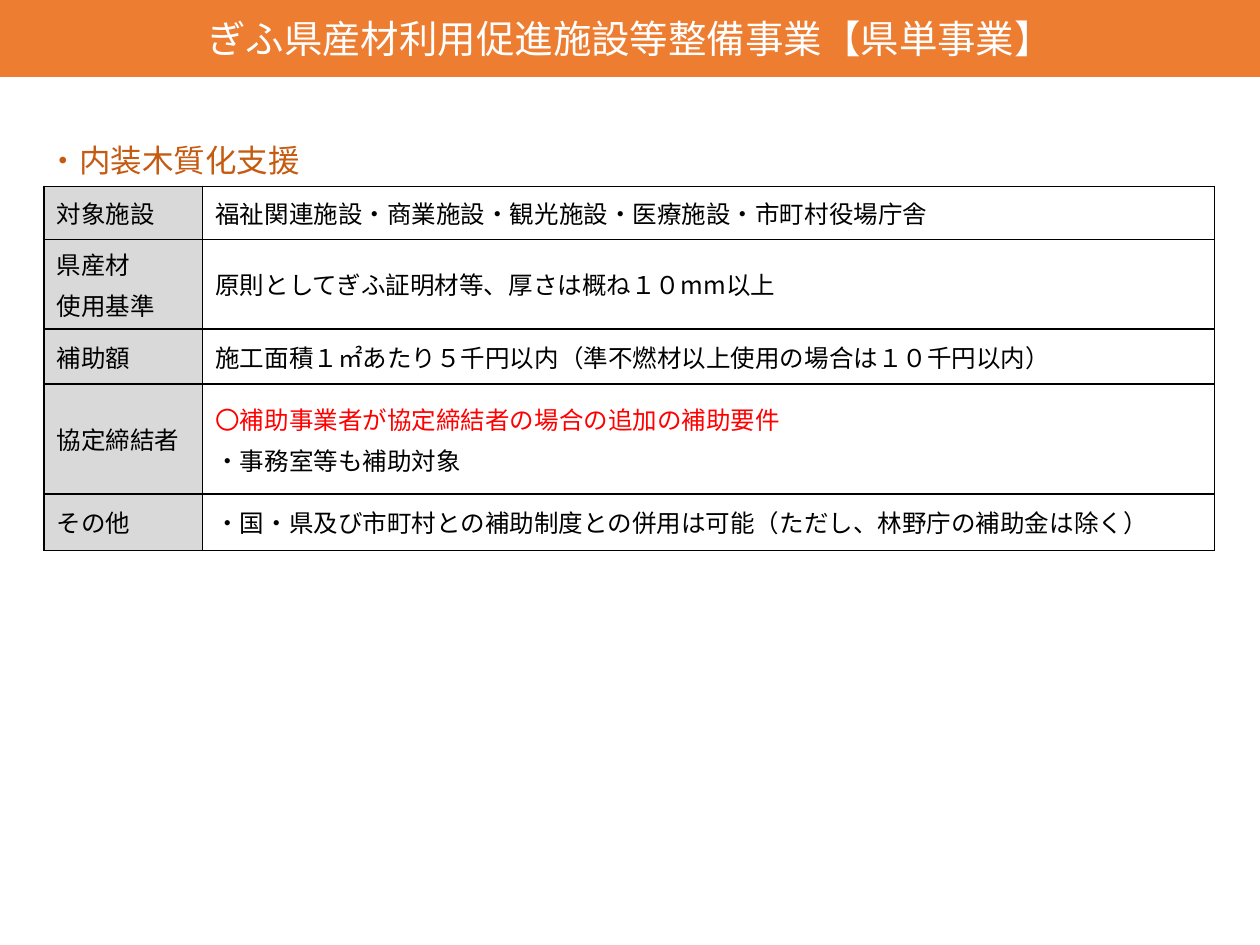
from dataclasses import dataclass

from lxml import etree
from pptx import Presentation
from pptx import util as u
from pptx.dml.color import RGBColor
from pptx.enum import shapes, text
from pptx.oxml.ns import qn


@dataclass(frozen=True)
class Theme:
    font: str = "Noto Sans CJK JP"
    black: str = "000000"
    white: str = "FFFFFF"
    grey: str = "D9D9D9"
    orange: str = "ED7D31"
    rust: str = "C55A11"
    red: str = "FF0000"
    title: float = 22
    head: float = 18
    body: float = 14
    gap: float = 2.8


@dataclass(frozen=True)
class Line:
    words: str
    color: str = Theme.black
    size: float = Theme.body
    align: text.PP_ALIGN = text.PP_ALIGN.LEFT


@dataclass(frozen=True)
class Row:
    height: float
    label: list[Line]
    detail: list[Line]


THEME = Theme()
WIDTHS = (1.26, 8.03)
ROWS = [
    Row(0.42, [Line("対象施設")],
        [Line("福祉関連施設・商業施設・観光施設・医療施設・市町村役場庁舎")]),
    Row(0.71, [Line("県産材"), Line("使用基準")],
        [Line("原則としてぎふ証明材等、厚さは概ね１０mm以上")]),
    Row(0.44, [Line("補助額")],
        [Line("施工面積１㎡あたり５千円以内（準不燃材以上使用の場合は１０千円以内）")]),
    Row(0.87, [Line("協定締結者")],
        [Line("〇補助事業者が協定締結者の場合の追加の補助要件", THEME.red),
         Line("・事務室等も補助対象")]),
    Row(0.45, [Line("その他")],
        [Line("・国・県及び市町村との補助制度との併用は可能（ただし、林野庁の補助金は除く）")]),
]


def write(frame, lines: list[Line]) -> None:
    """Fill a text frame, one paragraph a line."""
    frame.word_wrap = True
    for i, line in enumerate(lines):
        para = frame.add_paragraph() if i else frame.paragraphs[0]
        para.alignment = line.align
        if i:
            para.space_before = u.Pt(THEME.gap)
        run = para.add_run()
        run.text = line.words
        look = {"name": THEME.font, "size": u.Pt(line.size)}
        for key, value in look.items():
            setattr(run.font, key, value)
        run.font.color.rgb = RGBColor.from_string(line.color)
        east = etree.SubElement(run.font._element, qn("a:ea"))
        east.set("typeface", THEME.font)


def edge(cell, sides: dict[str, float]) -> None:
    """Draw cell borders; they must precede the cell fill."""
    props = cell._tc.get_or_add_tcPr()
    for side, width in sides.items():
        line = etree.SubElement(props, qn(f"a:ln{side}"), w=str(u.Pt(width)))
        fill = etree.SubElement(line, qn("a:solidFill"))
        etree.SubElement(fill, qn("a:srgbClr"), val=THEME.black)


def paint(part, color: str) -> None:
    part.fill.solid()
    part.fill.fore_color.rgb = RGBColor.from_string(color)


def banner(slide) -> None:
    bar = slide.shapes.add_shape(shapes.MSO_SHAPE.RECTANGLE, 0, 0,
                                 u.Inches(10), u.Inches(0.61))
    bar.shadow.inherit = False
    paint(bar, THEME.orange)
    bar.line.fill.background()
    bar.text_frame.vertical_anchor = text.MSO_ANCHOR.MIDDLE
    write(bar.text_frame, [Line("ぎふ県産材利用促進施設等整備事業【県単事業】",
                                THEME.white, THEME.title, text.PP_ALIGN.CENTER)])


def heading(slide) -> None:
    box = slide.shapes.add_textbox(u.Inches(0.28), u.Inches(1.07),
                                   u.Inches(6.77), u.Inches(0.4))
    write(box.text_frame, [Line("・内装木質化支援", THEME.rust, THEME.head)])


def grid(slide) -> None:
    frame = slide.shapes.add_table(
        len(ROWS), len(WIDTHS), u.Inches(0.35), u.Inches(1.48),
        u.Inches(sum(WIDTHS)), u.Inches(sum(row.height for row in ROWS)))
    table = frame.table
    for col, width in zip(table.columns, WIDTHS):
        col.width = u.Inches(width)
    sides = ({"L": 1, "R": 0.5, "T": 1, "B": 1},
             {"L": 0.5, "R": 1, "T": 1, "B": 1})
    fills = (THEME.grey, THEME.white)
    form = {"vertical_anchor": text.MSO_ANCHOR.MIDDLE,
            "margin_left": u.Inches(0.1), "margin_right": u.Inches(0.1),
            "margin_top": u.Inches(0.05), "margin_bottom": u.Inches(0.05)}
    for r, row in enumerate(ROWS):
        table.rows[r].height = u.Inches(row.height)
        for c, lines in enumerate((row.label, row.detail)):
            cell = table.cell(r, c)
            for key, value in form.items():
                setattr(cell, key, value)
            edge(cell, sides[c])
            paint(cell, fills[c])
            write(cell.text_frame, lines)


def main() -> None:
    deck = Presentation()
    deck.slide_width, deck.slide_height = u.Inches(10), u.Inches(7.5)
    slide = deck.slides.add_slide(deck.slide_layouts[6])
    # Support terms table, title bar, section heading
    grid(slide)
    banner(slide)
    heading(slide)
    deck.save("out.pptx")


if __name__ == "__main__":
    main()
